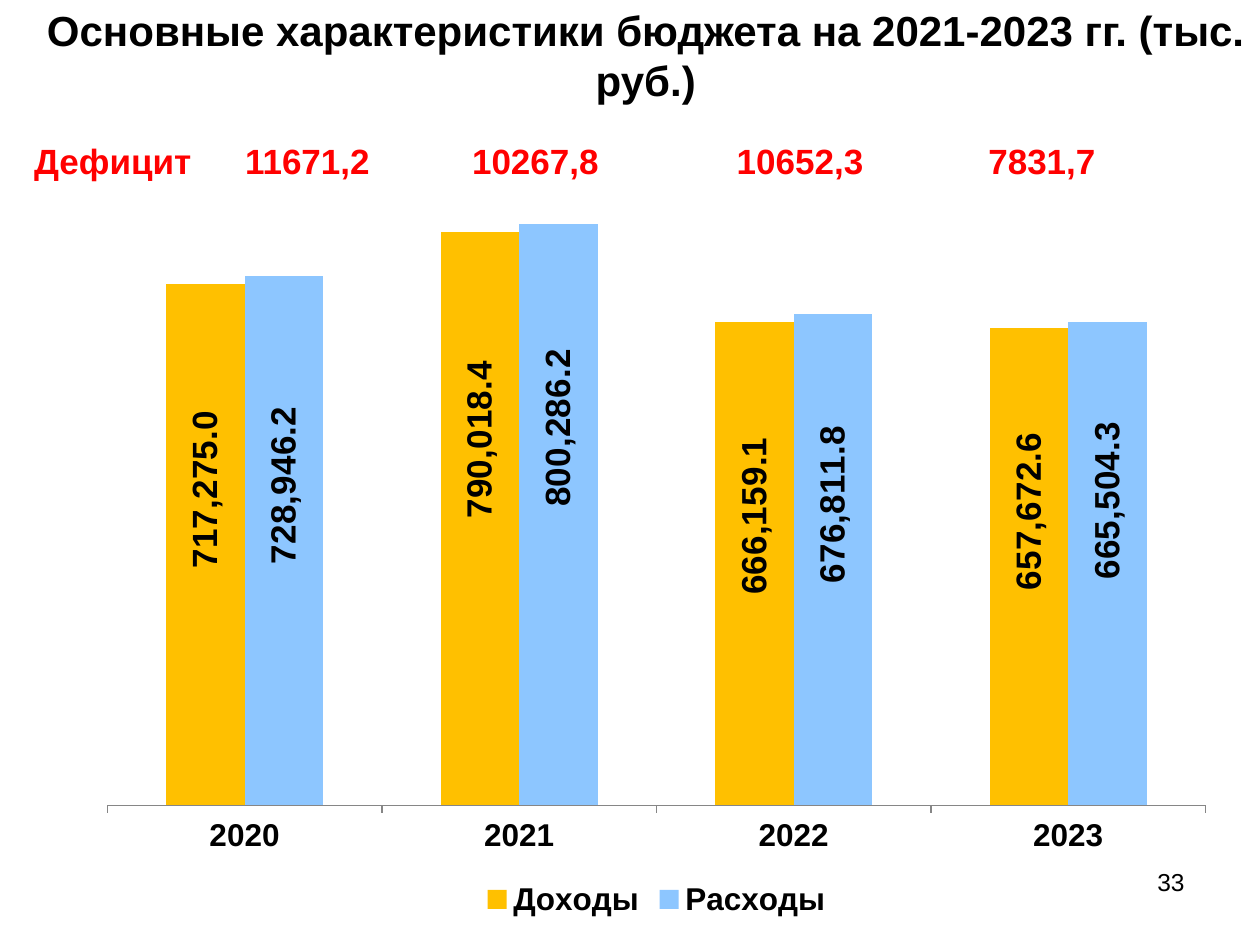
"""Build the slide with the main budget figures and the deficit by year."""
from lxml import etree
from pptx import Presentation
from pptx.chart.data import CategoryChartData
from pptx.dml.color import RGBColor
from pptx.enum.chart import XL_CHART_TYPE, XL_LABEL_POSITION, XL_LEGEND_POSITION, XL_TICK_MARK
from pptx.enum.text import MSO_ANCHOR, PP_ALIGN
from pptx.oxml.ns import qn
from pptx.util import Inches, Pt

COLUMNS = XL_CHART_TYPE.COLUMN_CLUSTERED
LABEL_CENTER = XL_LABEL_POSITION.CENTER
LEGEND_BOTTOM = XL_LEGEND_POSITION.BOTTOM
TICK_OUT = XL_TICK_MARK.OUTSIDE
MIDDLE = MSO_ANCHOR.MIDDLE
LEFT, CENTER, RIGHT = PP_ALIGN.LEFT, PP_ALIGN.CENTER, PP_ALIGN.RIGHT

COLORS = {"text": "000000", "deficit": "FF0000", "background": "FFFFFF",
          "income": "FFC000", "spending": "8DC6FF", "axis": "868686"}
NUMBER_FORMAT = "#,##0.0"


def style_font(font, size, color="text", bold=True):
    font.name = "Arial"
    font.size = Pt(size)
    font.bold = bold
    font.color.rgb = RGBColor.from_string(COLORS[color])


def add_layout(parent, index, **shares):
    for old in parent.findall(qn("c:layout")):
        parent.remove(old)
    layout = etree.Element(qn("c:layout"))
    manual = etree.SubElement(layout, qn("c:manualLayout"))
    for tag, value in shares.items():
        etree.SubElement(manual, qn(f"c:{tag}")).set("val", str(value))
    parent.insert(index, layout)


prs = Presentation()
prs.slide_width, prs.slide_height = Inches(10), Inches(7.5)
slide = prs.slides.add_slide(prs.slide_layouts[5])

title = slide.shapes.title
title.left, title.top = Inches(0.25), Inches(0.25)
title.width, title.height = Inches(9.75), Inches(0.37)
title.text_frame.vertical_anchor = MIDDLE
heading = title.text_frame.paragraphs[0]
heading.alignment = CENTER
run = heading.add_run()
run.text = "Основные характеристики бюджета на 2021-2023 гг. (тыс. руб.)"
style_font(run.font, 24)

budget = CategoryChartData(number_format=NUMBER_FORMAT)
budget.categories = ["2020", "2021", "2022", "2023"]
budget.add_series("Доходы", [717275, 790018.4, 666159.1, 657672.6])
budget.add_series("Расходы", [728946.2, 800286.2, 676811.8, 665504.3])
chart = slide.shapes.add_chart(COLUMNS, Inches(0.67), Inches(1.08),
                               Inches(9.08), Inches(6.25), budget).chart
chart.has_title = False
style_font(chart.font, 18)
chart.has_legend = True
chart.legend.position = LEGEND_BOTTOM
chart.legend.include_in_layout = False
style_font(chart.legend.font, 18)

years = chart.category_axis
years.major_tick_mark = TICK_OUT
years.format.line.color.rgb = RGBColor.from_string(COLORS["axis"])
style_font(years.tick_labels.font, 18)
amounts = chart.value_axis
amounts.visible = False
amounts.has_major_gridlines = False
amounts.minimum_scale, amounts.maximum_scale = 200, 900000

plot = chart.plots[0]
plot.gap_width, plot.overlap = 150, 0
plot.vary_by_categories = False
add_layout(chart._chartSpace.chart.plotArea, 0, layoutTarget="inner", xMode="edge",
           yMode="edge", x=0.02, y=0.02, w=0.96, h=0.83)

label_rises = {"income": [-0.07, -0.1, -0.06, -0.07],
               "spending": [-0.07, -0.11, -0.07, -0.08]}
for series, (color, rises) in zip(plot.series, label_rises.items()):
    series.format.fill.solid()
    series.format.fill.fore_color.rgb = RGBColor.from_string(COLORS[color])
    labels = series.data_labels
    labels.show_value = True
    labels.number_format = NUMBER_FORMAT
    labels.number_format_is_linked = False
    labels.position = LABEL_CENTER
    style_font(labels.font, 20)
    for index in range(len(rises)):
        label = series.points[index].data_label
        style_font(label.font, 20)
        label.position = LABEL_CENTER
    for body in labels._element.iter(qn("a:bodyPr")):
        body.set("rot", "-5400000")
        body.set("vert", "horz")
    for point_label, rise in zip(labels._element.findall(qn("c:dLbl")), rises):
        add_layout(point_label, 1, x=0, y=rise)
        number = etree.Element(qn("c:numFmt"), formatCode=NUMBER_FORMAT, sourceLinked="0")
        point_label.insert(2, number)
    for leader in labels._element.findall(qn("c:showLeaderLines")):
        labels._element.remove(leader)
    etree.SubElement(labels._element, qn("c:showLeaderLines")).set("val", "0")

page_box = slide.shapes.add_textbox(Inches(7.17), Inches(6.83), Inches(2.33), Inches(0.52))
page_box.text_frame.word_wrap = True
page = page_box.text_frame.paragraphs[0]
page.alignment = RIGHT
run = page.add_run()
run.text = "33"
style_font(run.font, 14, bold=False)

deficits = ["Дефицит", "11671,2", "10267,8", "10652,3", "7831,7"]
widths = [1.54, 1.46, 2.16, 2.04, 1.8]
table = slide.shapes.add_table(1, len(deficits), Inches(0.17), Inches(1.08),
                               Inches(sum(widths)), Inches(0.42)).table
table.first_row = table.horz_banding = False
for column, (deficit, width) in enumerate(zip(deficits, widths)):
    table.columns[column].width = Inches(width)
    cell = table.cell(0, column)
    cell.fill.solid()
    cell.fill.fore_color.rgb = RGBColor.from_string(COLORS["background"])
    entry = cell.text_frame.paragraphs[0]
    entry.alignment = CENTER if column else LEFT
    run = entry.add_run()
    run.text = deficit
    style_font(run.font, 20, "deficit")

prs.save("out.pptx")
